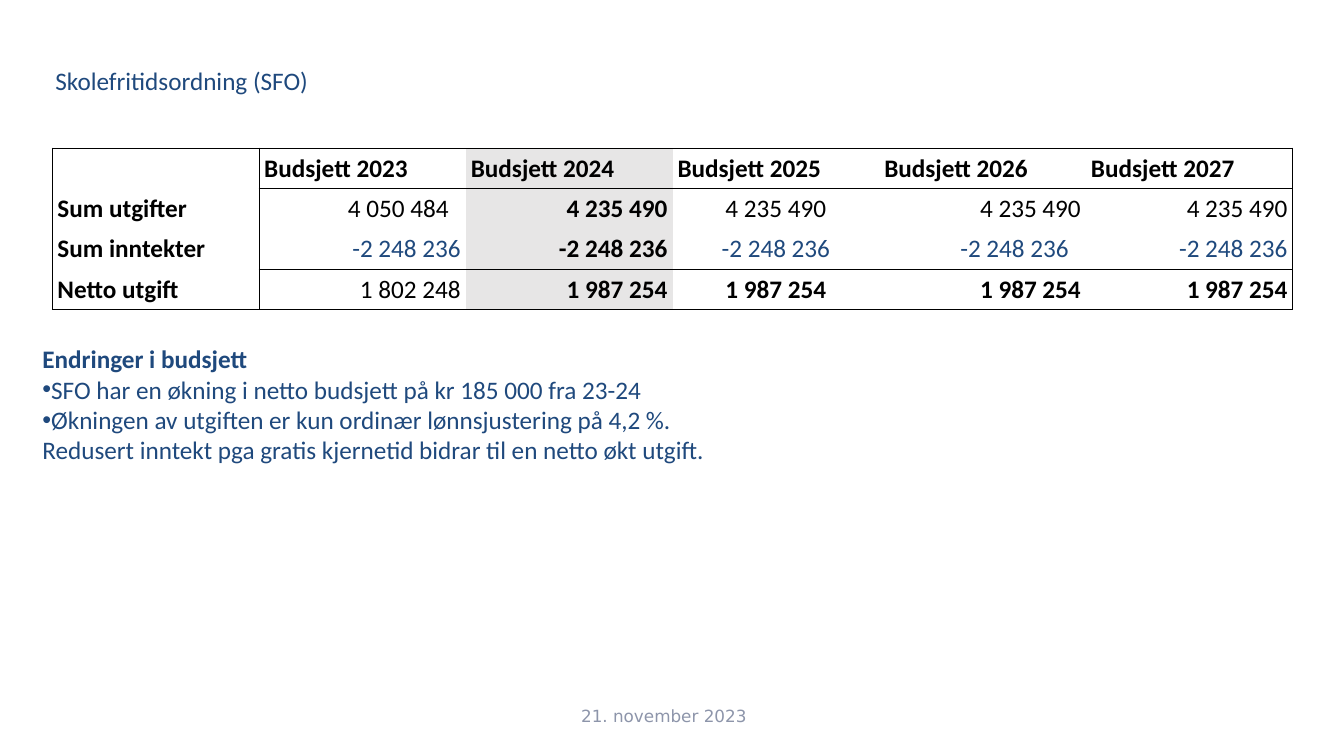
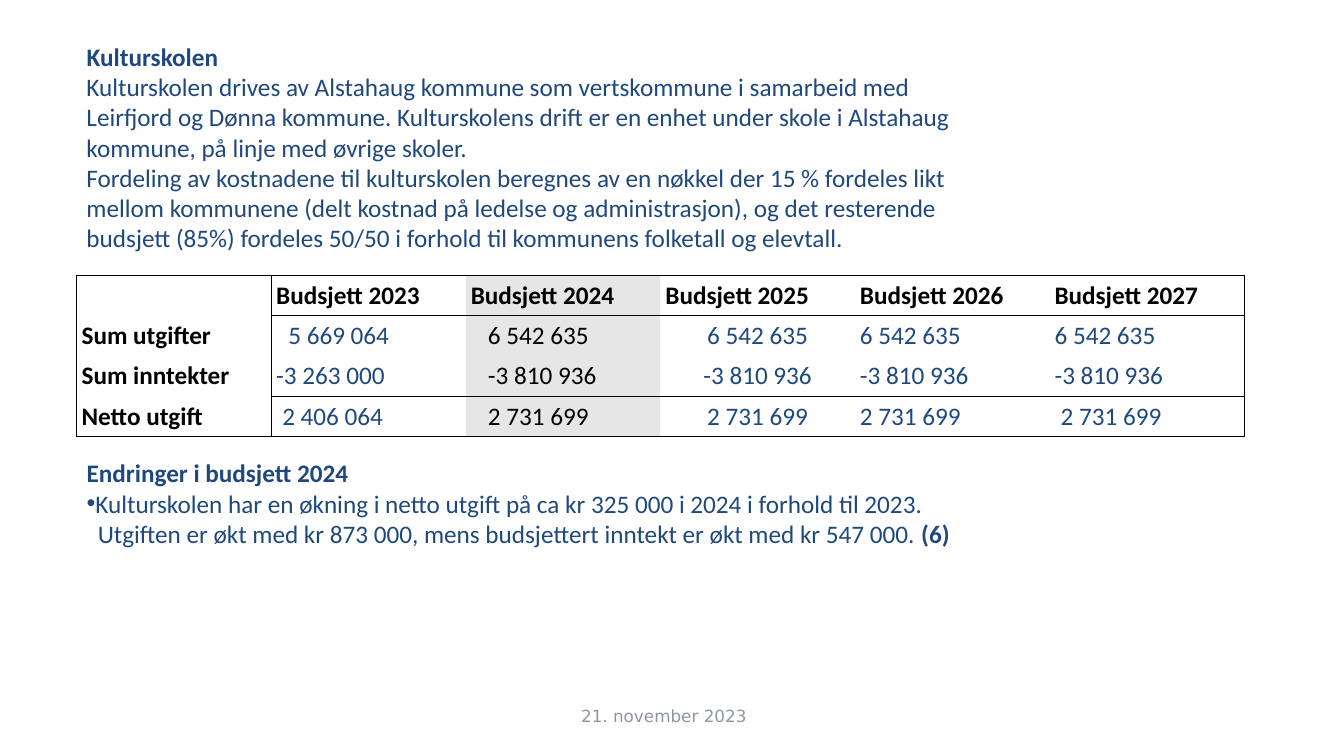
from itertools import product

from lxml import etree
from pptx import Presentation
from pptx.dml.color import RGBColor
from pptx.enum.text import MSO_ANCHOR, MSO_AUTO_SIZE, PP_ALIGN
from pptx.oxml.ns import qn
from pptx.util import Emu, Pt

LEFT, CENTER, RIGHT = PP_ALIGN.LEFT, PP_ALIGN.CENTER, PP_ALIGN.RIGHT
TOP, MIDDLE, BOTTOM = MSO_ANCHOR.TOP, MSO_ANCHOR.MIDDLE, MSO_ANCHOR.BOTTOM
NO_AUTOFIT = MSO_AUTO_SIZE.NONE

COLORS = {"blue": "1F497D", "black": "000000", "date": "8D95AA", "current": "E7E6E6"}
FONT, DATE_FONT = "Calibri", "DejaVu Sans"
HEADERS = ["", "Budsjett 2023", "Budsjett 2024", "Budsjett 2025", "Budsjett 2026", "Budsjett 2027"]
LABELS = ["Sum utgifter", "Sum inntekter", "Netto utgift"]
CURRENT_COL, LAST_COL, LAST_ROW = 2, 5, 3
OTHER_COLS = (1, 3, 4, 5)
ROW_H, CELL_PAD = 40, 5


def px(n):
    """Turn px, 100 to the inch, into EMU."""
    return Emu(n * 9144)


def rgb(name):
    """Look up a palette colour."""
    return RGBColor.from_string(COLORS[name])


def add_run(p, text, bold=False, color="blue", font=FONT, size=18):
    """Add one formatted run to a paragraph."""
    r = p.add_run()
    r.text = text
    r.font.name, r.font.size, r.font.bold = font, Pt(size), bold
    r.font.color.rgb = rgb(color)


def set_bullet(p, char, indent):
    """Set the bullet, or its absence, and the left indent."""
    pPr = p._p.get_or_add_pPr()
    pPr.set("marL", str(px(indent)))
    pPr.set("indent", "0")
    if char:
        etree.SubElement(pPr, qn("a:buChar")).set("char", char)
    else:
        etree.SubElement(pPr, qn("a:buNone"))


def write(sp, at, paragraphs):
    """Place a text shape and fill it with (runs, bullet, indent) paragraphs."""
    sp.left, sp.top, sp.width, sp.height = map(px, at)
    tf = sp.text_frame
    tf.word_wrap, tf.auto_size, tf.vertical_anchor = True, NO_AUTOFIT, TOP
    for i, (runs, bullet, indent) in enumerate(paragraphs):
        p = tf.add_paragraph() if i else tf.paragraphs[0]
        set_bullet(p, bullet, indent)
        p.alignment, p.space_before = LEFT, Pt(0)
        for text, bold in runs:
            add_run(p, text, bold)


def para(text, bold=False, bullet=None, indent=0):
    """Describe a paragraph of one run."""
    return [(text, bold)], bullet, indent


def add_text(s, at, paragraphs):
    """Add a text box."""
    write(s.shapes.add_textbox(0, 0, 0, 0), at, paragraphs)


def add_date(s):
    """Add the date at the foot of the slide."""
    tf = s.shapes.add_textbox(*map(px, (503, 690, 311, 40))).text_frame
    tf.word_wrap, tf.vertical_anchor = True, MIDDLE
    p = tf.paragraphs[0]
    p.alignment = CENTER
    add_run(p, "21. november 2023", color="date", font=DATE_FONT, size=12)


def set_borders(cell, row, col):
    """Draw the frame, the label divider and the rules around the sums."""
    sides = {
        "a:lnL": col <= 1,
        "a:lnR": col in (0, LAST_COL),
        "a:lnT": row == 0 or (col > 0 and row in (1, 3)),
        "a:lnB": row == LAST_ROW or (col > 0 and row in (0, 2)),
    }
    tcPr = cell._tc.get_or_add_tcPr()
    for tag, visible in sides.items():
        ln = etree.SubElement(tcPr, qn(tag), w=str(Pt(1)))
        if visible:
            fill = etree.SubElement(ln, qn("a:solidFill"))
            etree.SubElement(fill, qn("a:srgbClr"), val=COLORS["black"])
        else:
            etree.SubElement(ln, qn("a:noFill"))


def add_budget(s, left, top, col_w, sums, aligns, blue, bold=(), pads=None):
    """Add a budget table; blue, bold and pads refer to (row, column)."""
    rows = [HEADERS] + [[label] + values for label, values in zip(LABELS, sums)]
    size = (col_w * len(HEADERS), ROW_H * len(rows))
    frame = s.shapes.add_table(len(rows), len(HEADERS), *map(px, (left, top) + size))
    table = frame.table
    table.first_row = table.horz_banding = False
    for column in table.columns:
        column.width = px(col_w)
    for row, col in product(range(len(rows)), range(len(HEADERS))):
        cell = table.cell(row, col)
        heading = row == 0 or col == 0
        align = LEFT if heading else aligns[col - 1]
        extra = (pads or {}).get((row, col), 0)
        cell.margin_top = cell.margin_bottom = px(CELL_PAD)
        cell.margin_left = px(CELL_PAD + (extra if align == LEFT else 0))
        cell.margin_right = px(CELL_PAD + (extra if align == RIGHT else 0))
        cell.vertical_anchor = BOTTOM if heading else TOP
        set_borders(cell, row, col)
        if col == CURRENT_COL:
            cell.fill.solid()
            cell.fill.fore_color.rgb = rgb("current")
        else:
            cell.fill.background()
        p = cell.text_frame.paragraphs[0]
        p.alignment = align
        if rows[row][col]:
            color = "blue" if (row, col) in blue else "black"
            add_run(p, rows[row][col], heading or (row, col) in bold, color)


def new_slide(prs, title, title_at, title_bold, body, body_at):
    """Add a slide with its title, list and date."""
    s = prs.slides.add_slide(prs.slide_layouts[1])
    write(s.shapes.title, title_at, [para(title, title_bold)])
    write(s.placeholders[1], body_at, body)
    add_date(s)
    return s


def add_after_school(prs):
    """Build the after-school slide."""
    s = new_slide(prs, "Skolefritidsordning (SFO)", (45, 60, 667, 40), False, [
        para("Endringer i budsjett", True),
        para("SFO har en økning i netto budsjett på kr 185 000 fra 23-24", bullet="•"),
        para("Økningen av utgiften er kun ordinær lønnsjustering på 4,2 %.", bullet="•"),
        para("Redusert inntekt pga gratis kjernetid bidrar til en netto økt utgift."),
    ], (32, 336, 690, 131))
    sums = [
        ["4 050 484"] + ["4 235 490"] * 4,
        ["-2 248 236"] * 5,
        ["1 802 248"] + ["1 987 254"] * 4,
    ]
    add_budget(s, 52, 147, 205, sums, [RIGHT, RIGHT, CENTER, RIGHT, RIGHT],
               blue=set(product([2], OTHER_COLS)),
               bold={(1, 2), (2, 2)} | set(product([3], range(2, 6))),
               pads={(1, 1): 12, (2, 4): 12})


def add_culture_school(prs):
    """Build the culture school slide."""
    last_line = [("Utgiften er økt med kr 873 000, mens budsjettert inntekt "
                  "er økt med kr 547 000. ", False), ("(6)", True)]
    s = new_slide(prs, "Kulturskolen", (76, 36, 906, 40), True, [
        para("Endringer i budsjett 2024", True),
        para("Kulturskolen har en økning i netto utgift på ca kr 325 000 i 2024 "
             "i forhold til 2023.", bullet="•"),
        (last_line, None, 11),
    ], (76, 449, 1158, 101))
    add_text(s, (76, 66, 906, 192), [
        para("Kulturskolen drives av Alstahaug kommune som vertskommune i samarbeid med "
             "Leirfjord og Dønna kommune. Kulturskolens drift er en enhet under skole i "
             "Alstahaug kommune, på linje med øvrige skoler."),
        para("Fordeling av kostnadene til kulturskolen beregnes av en nøkkel der 15 % "
             "fordeles likt mellom kommunene (delt kostnad på ledelse og administrasjon), "
             "og det resterende budsjett (85%) fordeles 50/50 i forhold til kommunens "
             "folketall og elevtall."),
    ])
    sums = [
        ["5 669 064"] + ["6 542 635"] * 4,
        ["-3 263 000"] + ["-3 810 936"] * 4,
        ["2 406 064"] + ["2 731 699"] * 4,
    ]
    pads = {(row, CURRENT_COL): 17 for row in (1, 2, 3)}
    pads.update({(1, 1): 12, (3, 1): 6, (3, 5): 6})
    add_budget(s, 76, 273, 193, sums, [LEFT, LEFT, CENTER, LEFT, LEFT],
               blue=set(product((1, 2, 3), OTHER_COLS)), pads=pads)


def main():
    """Build and save the presentation."""
    prs = Presentation()
    prs.slide_width, prs.slide_height = px(1333), px(750)
    add_after_school(prs)
    add_culture_school(prs)
    prs.save("out.pptx")


if __name__ == "__main__":
    main()
